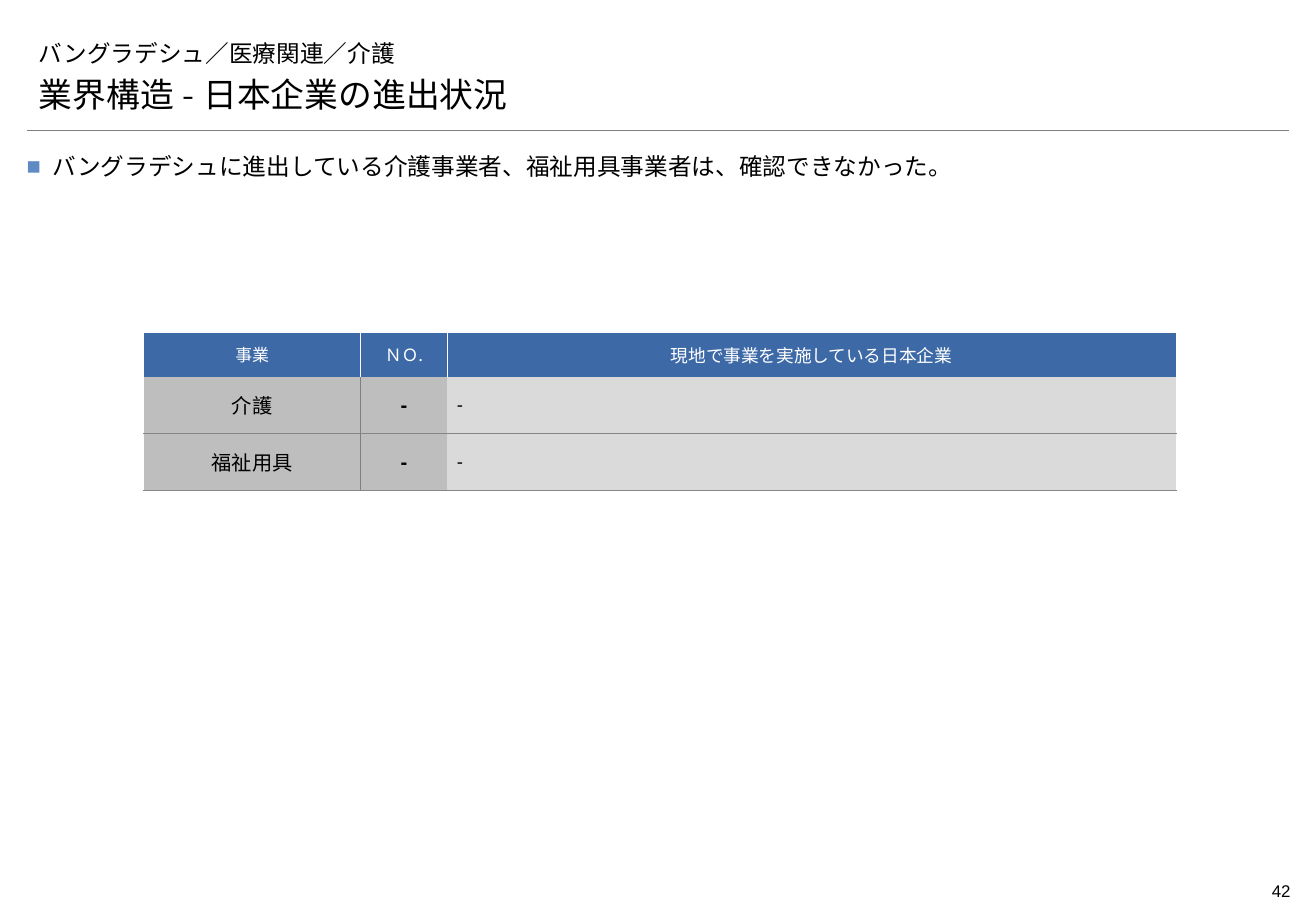
from lxml.etree import SubElement
from pptx import Presentation
from pptx.dml.color import RGBColor
from pptx.enum.shapes import MSO_CONNECTOR
from pptx.enum.text import MSO_ANCHOR, PP_ALIGN
from pptx.oxml.ns import qn
from pptx.util import Pt

PX = 9144  # 100 px to the inch
JP_FONT = "Noto Sans CJK JP"
BLACK, WHITE = "000000", "FFFFFF"
HEADER_BLUE, LABEL_GREY, BODY_GREY = "3D6AA7", "BEBEBE", "DADADA"
RULE_GREY, ROW_GREY, BULLET_BLUE = "7F7F7F", "868686", "5F8AC3"


def px(n):
    return n * PX


def rgb(color):
    return RGBColor.from_string(color)


def add_run(p, text, size, font="Arial", color=BLACK, bold=False):
    r = p.add_run()
    r.text = text
    r.font.size = Pt(size)
    r.font.bold = bold
    r.font.color.rgb = rgb(color)
    r.font.name = font
    SubElement(r.font._element, qn("a:ea"), typeface=JP_FONT)


def set_margins(target, x, y):
    target.margin_left = target.margin_right = px(x)
    target.margin_top = target.margin_bottom = px(y)


def add_text(s, box, text, size, font="Arial", margins=(10, 5),
             anchor=MSO_ANCHOR.TOP, align=PP_ALIGN.LEFT):
    """Add a one-line text box and return its paragraph."""
    tf = s.shapes.add_textbox(*map(px, box)).text_frame
    tf.word_wrap = True
    tf.vertical_anchor = anchor
    set_margins(tf, *margins)
    p = tf.paragraphs[0]
    p.alignment = align
    add_run(p, text, size, font)
    return p


def add_bullet(p, char, color, indent):
    pPr = p._p.get_or_add_pPr()
    pPr.set("marL", str(px(indent)))
    pPr.set("indent", str(-px(indent)))
    SubElement(SubElement(pPr, qn("a:buClr")), qn("a:srgbClr"), val=color)
    SubElement(pPr, qn("a:buFont"), typeface="Arial")
    SubElement(pPr, qn("a:buChar"), char=char)


def add_rule(s, x1, x2, y):
    line = s.shapes.add_connector(MSO_CONNECTOR.STRAIGHT,
                                  px(x1), px(y), px(x2), px(y))
    line.line.color.rgb = rgb(RULE_GREY)
    line.line.width = Pt(0.25)
    SubElement(line._element.spPr, qn("a:effectLst"))


def set_borders(cell, **colors):
    """Draw the sides named L, R, T, B; the other sides stay empty."""
    tcPr = cell._tc.get_or_add_tcPr()
    for side in "LRTB":
        ln = SubElement(tcPr, qn(f"a:ln{side}"), w=str(Pt(0.5)))
        if side in colors:
            fill = SubElement(ln, qn("a:solidFill"))
            SubElement(fill, qn("a:srgbClr"), val=colors[side])
        else:
            SubElement(ln, qn("a:noFill"))


def fill_cell(cell, text, size, fill, borders, margin=8,
              align=PP_ALIGN.CENTER, **run):
    set_borders(cell, **borders)
    cell.fill.solid()
    cell.fill.fore_color.rgb = rgb(fill)
    cell.vertical_anchor = MSO_ANCHOR.MIDDLE
    set_margins(cell, margin, 4)
    p = cell.text_frame.paragraphs[0]
    p.alignment = align
    add_run(p, text, size, **run)


def add_company_table(s, x, y, widths, heights):
    headers = [("事業", 10, 0), ("ＮＯ.", 10, 0),
               ("現地で事業を実施している日本企業", 10.5, 8)]
    businesses = ["介護", "福祉用具"]
    table = s.shapes.add_table(len(heights), len(widths), px(x), px(y),
                               px(sum(widths)), px(sum(heights))).table
    table.first_row = table.horz_banding = False
    style = table._tbl.tblPr.find(qn("a:tableStyleId"))
    style.text = "{2D5ABB26-0587-4C30-8999-92F81FD0307C}"
    for column, width in zip(table.columns, widths):
        column.width = px(width)
    for row, height in zip(table.rows, heights):
        row.height = px(height)

    for col, (text, size, margin) in enumerate(headers):
        fill_cell(table.cell(0, col), text, size, HEADER_BLUE,
                  {"L": WHITE, "R": WHITE}, margin, font=JP_FONT, color=WHITE)
    for row, business in enumerate(businesses, 1):
        edges = {"B": ROW_GREY}
        if row > 1:
            edges["T"] = ROW_GREY
        fill_cell(table.cell(row, 0), business, 12, LABEL_GREY,
                  {"L": WHITE, "R": RULE_GREY, **edges}, font=JP_FONT)
        fill_cell(table.cell(row, 1), "-", 12, LABEL_GREY,
                  {"L": RULE_GREY, **edges}, bold=True)
        fill_cell(table.cell(row, 2), "‐", 11, BODY_GREY,
                  {"R": WHITE, **edges}, align=PP_ALIGN.LEFT)


def main():
    prs = Presentation()
    prs.slide_width, prs.slide_height = px(1083), px(750)
    s = prs.slides.add_slide(prs.slide_layouts[6])

    add_rule(s, 22, 1061, 107)
    add_text(s, (983, 720, 79, 27), "42", 10, margins=(0, 5),
             align=PP_ALIGN.RIGHT)
    add_text(s, (22, 21, 1039, 39), "バングラデシュ／医療関連／介護", 14,
             "Montserrat", anchor=MSO_ANCHOR.BOTTOM)
    add_text(s, (22, 60, 1040, 39), "業界構造 - 日本企業の進出状況", 20,
             "Montserrat", anchor=MSO_ANCHOR.BOTTOM)
    p = add_text(s, (22, 123, 1039, 26),
                 "バングラデシュに進出している介護事業者、福祉用具事業者は、確認できなかった。",
                 14, margins=(0, 0), align=PP_ALIGN.JUSTIFY)
    add_bullet(p, "■", BULLET_BLUE, 21)
    p.line_spacing = 1.1
    p.space_after = Pt(2)
    add_company_table(s, 118, 274, (179, 71, 600), (36, 47, 47))

    prs.save("out.pptx")


if __name__ == "__main__":
    main()
